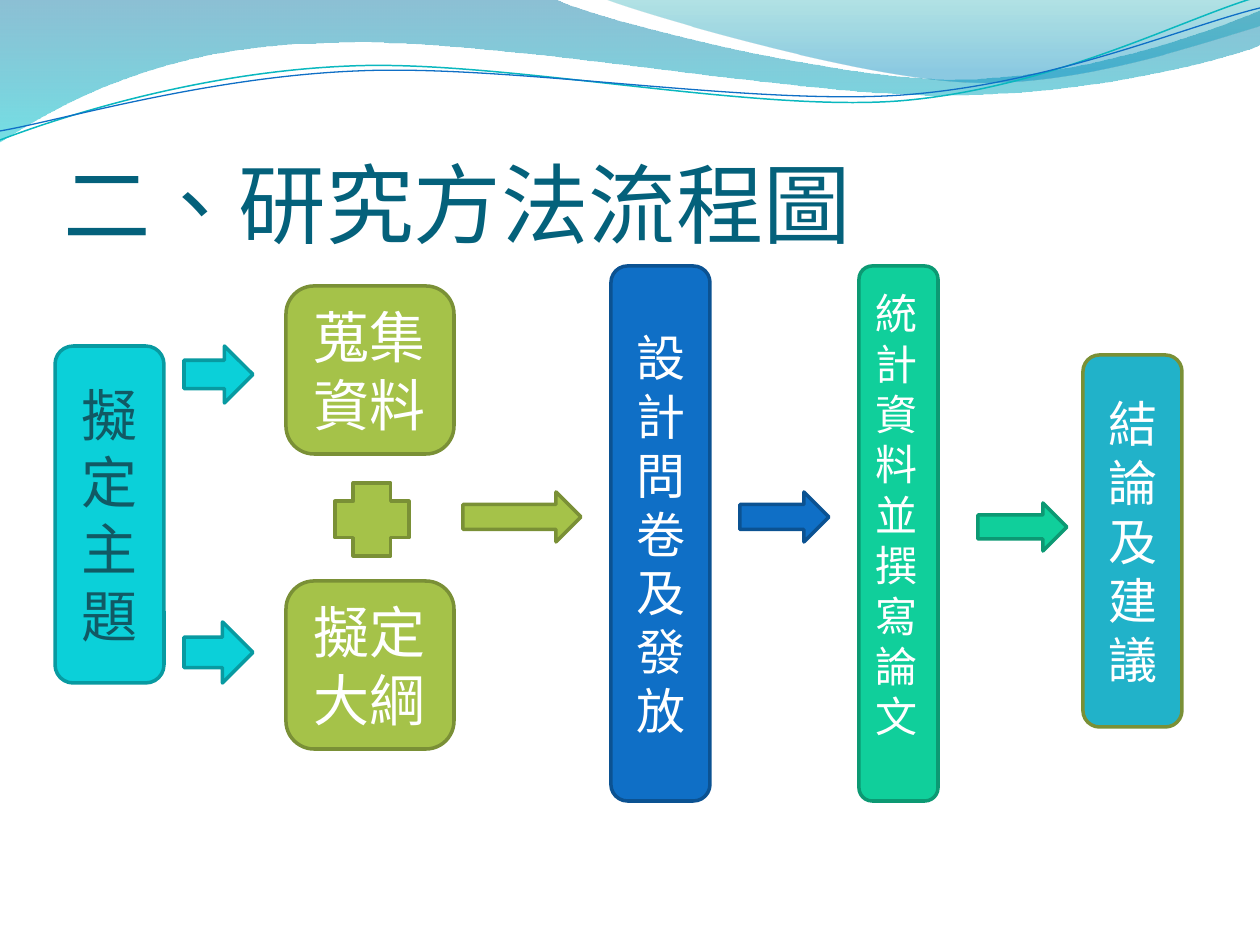
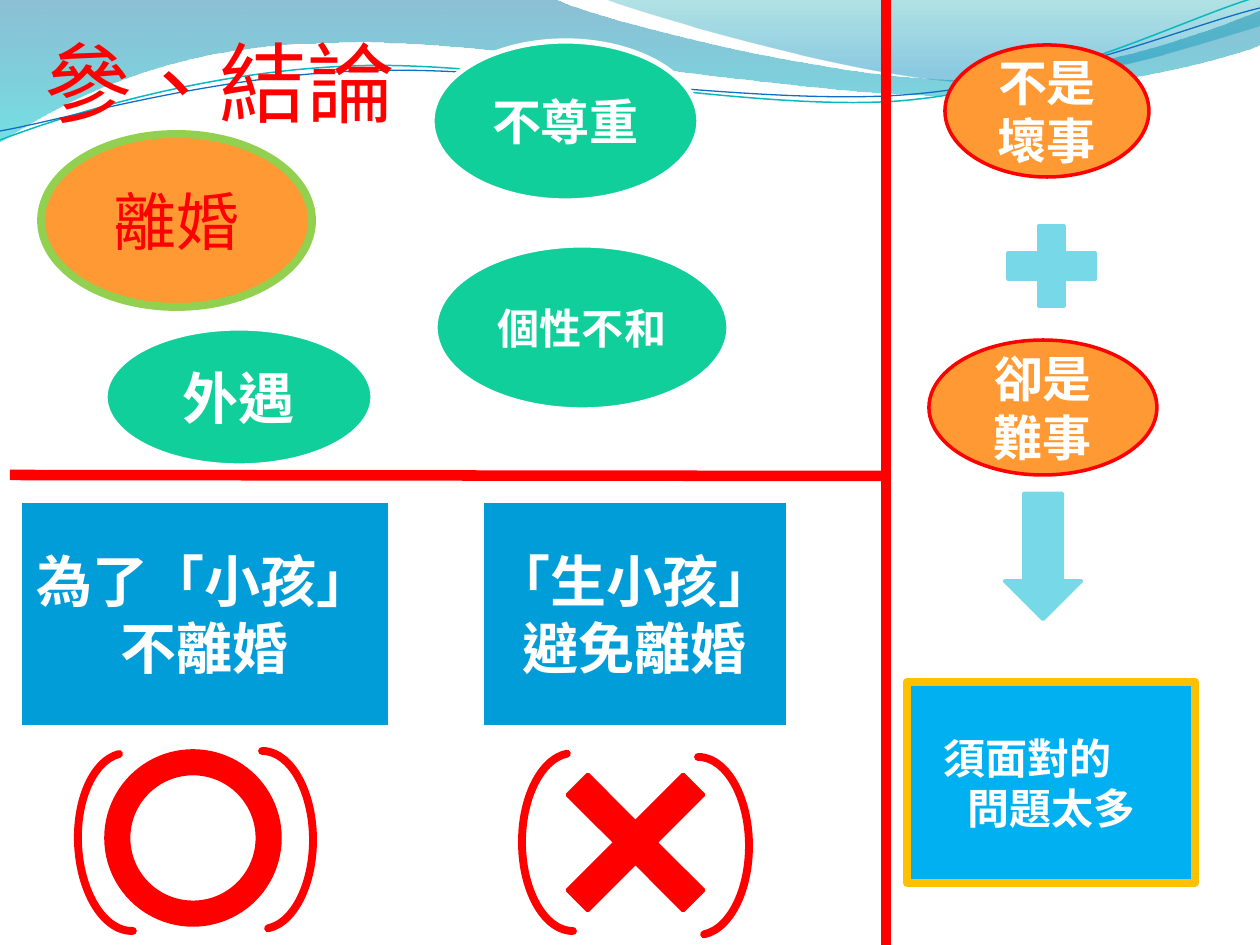
"""Build two slides: a research flow chart and a conclusion on divorce."""
from lxml import etree
from pptx import Presentation
from pptx import util as u
from pptx.dml.color import RGBColor
from pptx.enum import shapes, text
from pptx.oxml.ns import qn

PX = 914400 / 126
WIDTH, HEIGHT = 1260, 945

WHITE = RGBColor(0xFF, 0xFF, 0xFF)
RED = RGBColor(0xFF, 0x00, 0x00)
TITLE_TEAL = RGBColor(0x04, 0x61, 0x7B)
CYAN = RGBColor(0x0B, 0xD0, 0xD9)
CYAN_EDGE = RGBColor(0x08, 0x9A, 0xA1)
CYAN_TEXT = RGBColor(0x11, 0x59, 0x64)
OLIVE = RGBColor(0xA5, 0xC2, 0x49)
OLIVE_EDGE = RGBColor(0x7A, 0x90, 0x36)
BLUE = RGBColor(0x0F, 0x6F, 0xC6)
BLUE_EDGE = RGBColor(0x0B, 0x52, 0x92)
GREEN = RGBColor(0x10, 0xCF, 0x9B)
GREEN_EDGE = RGBColor(0x0C, 0x99, 0x73)
TURQUOISE = RGBColor(0x21, 0xB2, 0xC9)
ORANGE = RGBColor(0xFF, 0x99, 0x33)
LIME = RGBColor(0x92, 0xD0, 0x50)
PALE_CYAN = RGBColor(0x77, 0xD9, 0xE8)
SKY = RGBColor(0x00, 0xB0, 0xF0)
GOLD = RGBColor(0xFF, 0xC0, 0x00)
CARD_BLUE = RGBColor(0x00, 0x9D, 0xD9)
WAVE_BLUE = RGBColor(0x00, 0x74, 0xA1)
WAVE_CYAN = RGBColor(0x00, 0xC6, 0xCF)
WAVE_TEAL = RGBColor(0x00, 0xA1, 0xA9)
WAVE_SKY = RGBColor(0x00, 0x8B, 0xBF)
LINE_TEAL = RGBColor(0x0A, 0xB8, 0xBF)

KIND = shapes.MSO_SHAPE
CENTER, LEFT = text.PP_ALIGN.CENTER, text.PP_ALIGN.LEFT


def write(shape, words, size, color, font="Cambria", bold=False, align=CENTER):
    frame = shape.text_frame
    frame.text = words
    frame.word_wrap = True
    frame.vertical_anchor = text.MSO_ANCHOR.MIDDLE
    for paragraph in frame.paragraphs:
        paragraph.alignment = align
        for run in paragraph.runs:
            run.font.name = font
            run.font.size = u.Pt(size)
            run.font.bold = bold
            run.font.color.rgb = color
            run._r.get_or_add_rPr().set("lang", "zh-TW")
    return frame


def draw(parent, kind, box, fill, edge, weight=2, rotation=0, adjustments=()):
    shape = parent.shapes.add_shape(kind, *[round(length * PX) for length in box])
    shape.fill.solid()
    shape.fill.fore_color.rgb = fill
    shape.line.color.rgb = edge
    shape.line.width = u.Pt(weight)
    shape.rotation = rotation
    for index, value in enumerate(adjustments):
        shape.adjustments[index] = value
    shape.shadow.inherit = False
    return shape


presentation = Presentation()
presentation.slide_width = round(WIDTH * PX)
presentation.slide_height = round(HEIGHT * PX)
flow, conclusion = [presentation.slides.add_slide(presentation.slide_layouts[6]) for _ in range(2)]

# Each wave step is one point (straight) or three points (Bézier curve).
WAVE_BANDS = [
    ([[(0, 0)], [(554, -1)],
      [(600, 21), (837, 79), (955, 79)], [(1075, 79), (1207, 33), (1260, 11)], [(1261, 45)],
      [(1239, 55), (1096, 96), (940, 95)], [(784, 95), (481, 35), (324, 43)],
      [(163, 45), (58, 105), (-1, 142)]],
     [(0, WAVE_BLUE, 45), (1, WAVE_CYAN, 55)]),
    ([[(604, -1)], [(641, 14), (859, 78), (969, 82)],
      [(1079, 87), (1211, 40), (1260, 26)], [(1260, 0)]],
     [(0, WAVE_TEAL, 30), (0.8, WAVE_SKY, 45)]),
]
WAVE_LINES = [
    ([[(0, 140)], [(60, 117), (199, 72), (349, 66)], [(498, 59), (747, 112), (898, 101)],
      [(1050, 89), (1182, 19), (1257, -3)]], LINE_TEAL, 0.85),
    ([[(0, 131)], [(59, 121), (207, 77), (357, 71)], [(508, 64), (752, 106), (903, 95)],
      [(1053, 84), (1186, 26), (1260, 8)]], BLUE, 0.75),
]

for slide in (flow, conclusion):
    for steps, *style in WAVE_BANDS + WAVE_LINES:
        is_band = len(style) == 1
        points = [(round(x * PX), round(y * PX)) for step in steps for x, y in step]
        builder = slide.shapes.build_freeform(*points[0])
        builder.add_line_segments(points[1:], close=is_band)
        wave = builder.convert_to_shape()
        wave.shadow.inherit = False
        segments = iter(list(wave._element.iter(qn("a:lnTo"))))
        for step in steps[1:]:
            first, *others = [next(segments) for _ in step]
            if others:
                first.tag = qn("a:cubicBezTo")
                for segment in others:
                    first.append(segment[0])
                    segment.getparent().remove(segment)
        if is_band:
            wave.line.fill.background()
            wave.fill.gradient()
            wave.fill.gradient_angle = 270
            for stop, (position, color, opacity) in zip(wave.fill.gradient_stops, style[0]):
                stop.position = position
                stop.color.rgb = color
                etree.SubElement(stop._gs.find(qn("a:srgbClr")), qn("a:alpha"), val=str(opacity * 1000))
        else:
            wave.fill.background()
            wave.line.color.rgb = style[0]
            wave.line.width = u.Pt(style[1])

for slide, words, left, top, color in [(flow, "二、研究方法流程圖", 64, 97, TITLE_TEAL),
                                       (conclusion, "參、結論", 45, -24, RED)]:
    title = slide.shapes.add_textbox(*[round(length * PX) for length in (left, top, 1134, 158)])
    frame = write(title, words, 50, color, font="Calibri", align=LEFT)
    frame.vertical_anchor = text.MSO_ANCHOR.BOTTOM
    frame.margin_left = frame.margin_right = frame.margin_bottom = 0

for words, box, fill, edge, size, color, align, bottom in [
    ("擬定主題", (55, 346, 109, 337), CYAN, CYAN_EDGE, 32, CYAN_TEXT, CENTER, 6),
    ("蒐集資料", (286, 286, 168, 168), OLIVE, OLIVE_EDGE, 32, WHITE, CENTER, 6),
    ("擬定大綱", (286, 581, 168, 168), OLIVE, OLIVE_EDGE, 32, WHITE, CENTER, 6),
    ("設計問卷及發放", (611, 266, 99, 535), BLUE, BLUE_EDGE, 28, WHITE, CENTER, 6),
    ("統計資料並\n撰寫論文", (859, 266, 79, 535), GREEN, GREEN_EDGE, 24, WHITE, LEFT, 44),
    ("結論及建議", (1083, 355, 99, 372), TURQUOISE, OLIVE_EDGE, 28, WHITE, CENTER, 6),
]:
    stage = draw(flow, KIND.ROUNDED_RECTANGLE, box, fill, edge)
    write(stage, words, size, color, align=align).margin_bottom = round(bottom * PX)

for kind, box, fill, edge in [
    (KIND.RIGHT_ARROW, (184, 346, 69, 57), CYAN, CYAN_EDGE),
    (KIND.RIGHT_ARROW, (184, 622, 69, 61), CYAN, CYAN_EDGE),
    (KIND.CROSS, (335, 483, 74, 73), OLIVE, OLIVE_EDGE),
    (KIND.RIGHT_ARROW, (463, 492, 118, 50), OLIVE, OLIVE_EDGE),
    (KIND.RIGHT_ARROW, (740, 492, 89, 50), BLUE, BLUE_EDGE),
    (KIND.RIGHT_ARROW, (978, 503, 89, 48), GREEN, GREEN_EDGE),
]:
    draw(flow, kind, box, fill, edge)

divorce = draw(conclusion, KIND.OVAL, (41, 134, 271, 173), ORANGE, LIME, 4.5)
write(divorce, "離婚", 36, RED)

for words, box, size in [("不尊重", (432, 41, 267, 160), 28),
                         ("個性不和", (435, 245, 294, 165), 24),
                         ("外遇", (105, 328, 268, 138), 32)]:
    write(draw(conclusion, KIND.OVAL, box, GREEN, WHITE, 3), words, size, WHITE, bold=True)

for words, box in [("不是壞事", (945, 45, 204, 132)), ("卻是難事", (929, 340, 228, 135))]:
    write(draw(conclusion, KIND.OVAL, box, ORANGE, RED), words, 28, WHITE, bold=True)

draw(conclusion, KIND.MATH_PLUS, (992, 211, 119, 110), PALE_CYAN, PALE_CYAN)
draw(conclusion, KIND.RIGHT_ARROW, (980, 518, 126, 77), PALE_CYAN, PALE_CYAN, rotation=90)

problems = draw(conclusion, KIND.RECTANGLE, (907, 682, 288, 201), SKY, GOLD, 4.5)
frame = write(problems, "須面對的問題太多", 24, WHITE, bold=True, align=LEFT)
frame.margin_right = round(55 * PX)
properties = frame.paragraphs[0]._p.get_or_add_pPr()
properties.set("marL", str(round(48 * PX)))
properties.set("indent", str(round(-24 * PX)))

for ends in [(10, 475, 886, 476), (886, 0, 886, HEIGHT)]:
    divider = conclusion.shapes.add_connector(shapes.MSO_CONNECTOR.STRAIGHT,
                                              *[round(length * PX) for length in ends])
    divider.line.color.rgb = RED
    divider.line.width = u.Pt(6)
    etree.SubElement(divider._element.spPr, qn("a:effectLst"))

for words, left, width in [("「生小孩」\n避免離婚", 481, 308), ("為了「小孩」\n不離婚", 19, 372)]:
    card = draw(conclusion, KIND.RECTANGLE, (left, 500, width, 228), CARD_BLUE, WHITE, 3)
    write(card, words, 32, WHITE, bold=True)

for mark, box, brackets in [
    (KIND.MATH_MULTIPLY, (524, 731, 223, 223), [(484, 791, 270), (609, 795, 90)]),
    (KIND.DONUT, (106, 751, 174, 174), [(173, 789, 90), (40, 791, 267.5)]),
]:
    verdict = conclusion.shapes.add_group_shape()
    draw(verdict, mark, box, RED, RED, adjustments=[0.13])
    for left, top, rotation in brackets:
        draw(verdict, KIND.BLOCK_ARC, (left, top, 178, 102), BLUE, RED, 4.5, rotation,
             adjustments=[108, 213.63, 0])

presentation.save("out.pptx")
